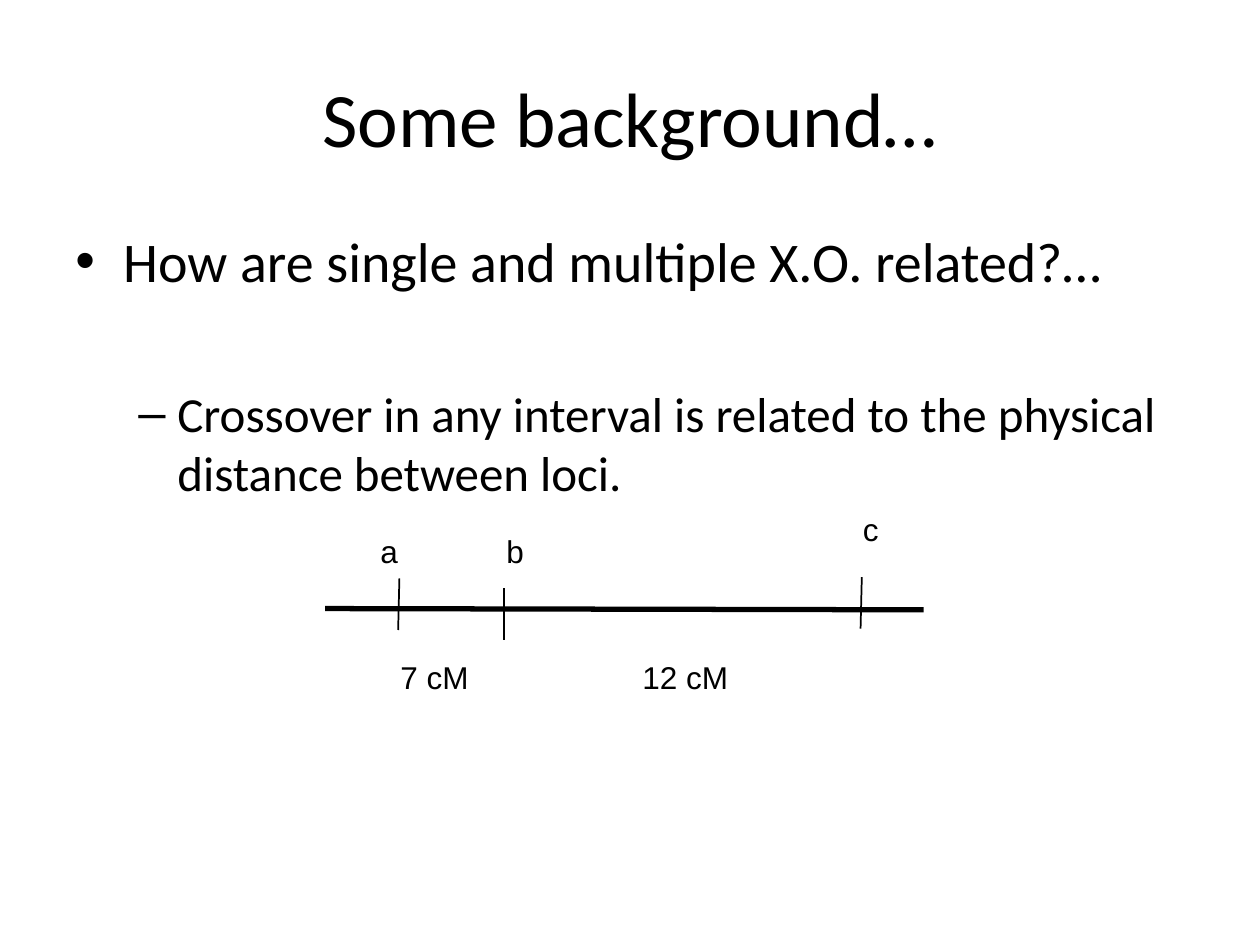
from lxml import etree
from pptx import Presentation
from pptx.dml.color import RGBColor
from pptx.enum.shapes import MSO_CONNECTOR
from pptx.enum.text import MSO_ANCHOR, PP_ALIGN
from pptx.oxml.ns import qn
from pptx.util import Inches, Pt

STRAIGHT = MSO_CONNECTOR.STRAIGHT
MIDDLE = MSO_ANCHOR.MIDDLE
CENTER = PP_ALIGN.CENTER
COLORS = {"ink": "000000", "paper": "FFFFFF"}
BODY_FONT, LABEL_FONT = "Calibri", "Arial"


class SlideBuilder:
    """Holds the style and the current slide."""

    def __init__(self, deck):
        self.page = deck.slides.add_slide(deck.slide_layouts[5])
        fill = self.page.background.fill
        fill.solid()
        fill.fore_color.rgb = RGBColor.from_string(COLORS["paper"])

    def style(self, para, size, font):
        for span in para.runs:
            span.font.size = Pt(size)
            span.font.name = font
            span.font.color.rgb = RGBColor.from_string(COLORS["ink"])

    def title(self, text, left, top, width, height):
        box = self.page.shapes.title
        box.left, box.top = Inches(left), Inches(top)
        box.width, box.height = Inches(width), Inches(height)
        frame = box.text_frame
        frame.text = text
        frame.vertical_anchor = MIDDLE
        frame.paragraphs[0].alignment = CENTER
        self.style(frame.paragraphs[0], 44, BODY_FONT)

    def text_box(self, left, top, width, height):
        box = self.page.shapes.add_textbox(
            Inches(left), Inches(top), Inches(width), Inches(height))
        box.text_frame.word_wrap = True
        return box.text_frame

    def label(self, text, left, top, width):
        frame = self.text_box(left, top, width, 0.4)
        frame.text = text
        self.style(frame.paragraphs[0], 18, LABEL_FONT)

    def bullets(self, items, left, top, width, height):
        frame = self.text_box(left, top, width, height)
        for index, (text, size, level, mark, margin, hang, gap) in enumerate(items):
            para = frame.add_paragraph() if index else frame.paragraphs[0]
            para.text = text
            para.level = level
            para.space_before = Pt(gap)
            self.style(para, size, BODY_FONT)
            props = para._p.get_or_add_pPr()
            props.set("marL", str(Inches(margin)))
            props.set("indent", str(-Inches(hang)))
            font = etree.SubElement(props, qn("a:buFont"))
            font.set("typeface", LABEL_FONT)
            etree.SubElement(props, qn("a:buChar")).set("char", mark)

    def line(self, x1, y1, x2, y2, weight):
        line = self.page.shapes.add_connector(
            STRAIGHT, Inches(x1), Inches(y1), Inches(x2), Inches(y2))
        line.line.width = Pt(weight)
        line.line.color.rgb = RGBColor.from_string(COLORS["ink"])
        etree.SubElement(line._element.spPr, qn("a:effectLst"))


def main():
    deck = Presentation()
    deck.slide_width, deck.slide_height = Inches(10), Inches(7.5)
    slide = SlideBuilder(deck)
    slide.title("Some background…", 0.5, 0.3, 9, 1.25)
    slide.bullets([
        ("How are single and multiple X.O. related?…", 32, 0, "•", 0.38, 0.38, 6.4),
        ("Crossover in any interval is related to the physical distance between loci.",
         28, 1, "–", 0.81, 0.31, 51),
    ], 0.5, 1.75, 9, 4.95)

    slide.line(2.58, 4.83, 7.33, 4.84, 3)
    loci = [("a", 3.17, 3.16, 4.59, 2.92, 4.17, 0.67),
            ("b", 4, 4, 4.67, 3.92, 4.17, 1),
            ("c", 6.84, 6.83, 4.58, 6.75, 4, 0.92)]
    for name, tick_top_x, tick_end_x, tick_top, left, top, width in loci:
        slide.line(tick_top_x, tick_top, tick_end_x, tick_top + 0.41, 1)
        slide.label(name, left, top, width)
    for distance, left, width in [("7 cM", 3.08, 0.83), ("12 cM", 5, 1.67)]:
        slide.label(distance, left, 5.17, width)
    deck.save("out.pptx")


if __name__ == "__main__":
    main()
